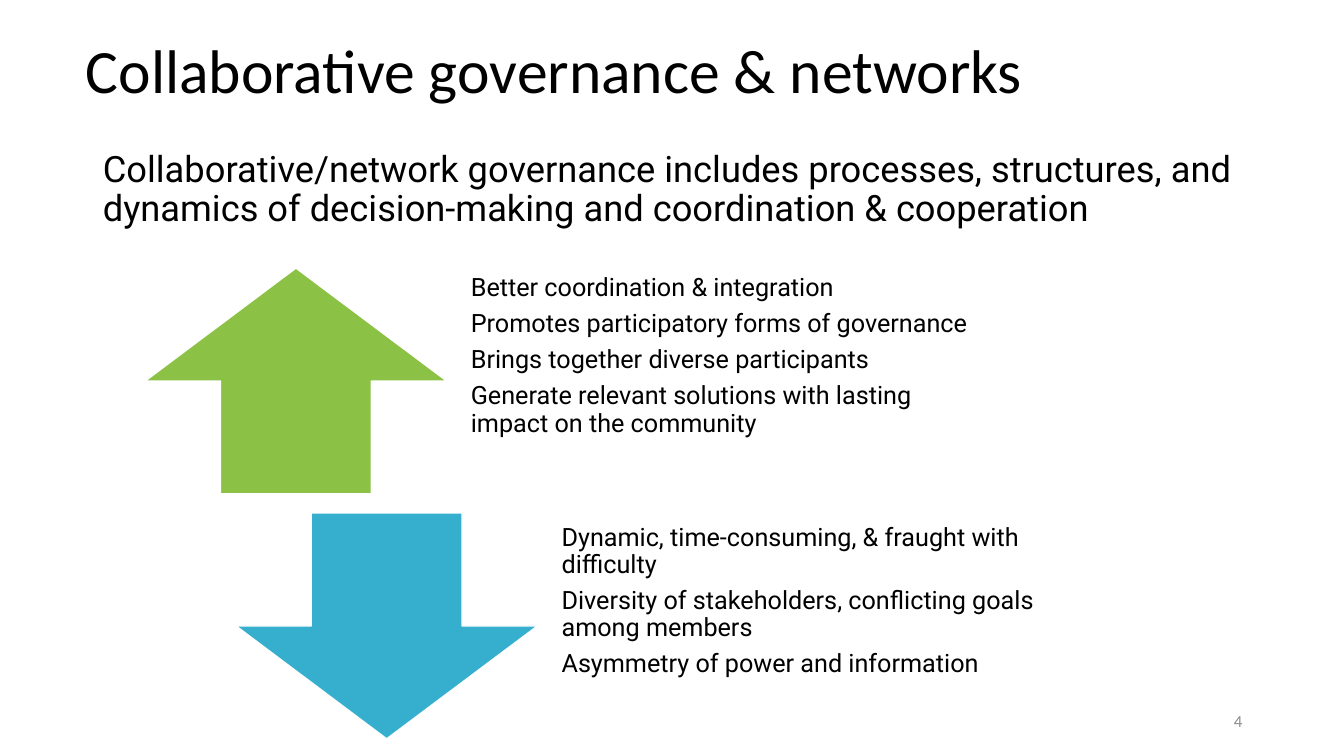
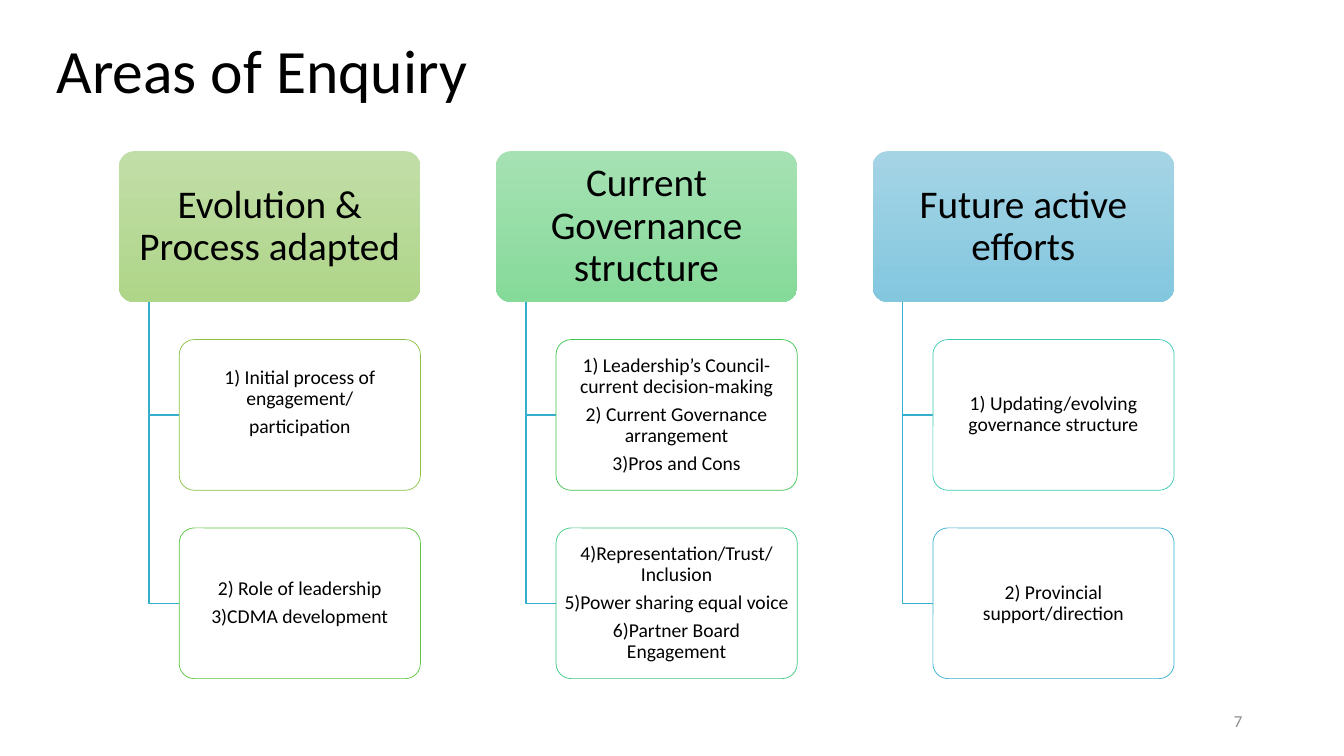
from pptx import Presentation
from pptx.dml.color import RGBColor
from pptx.enum.shapes import MSO_SHAPE as SHAPE
from pptx.enum.text import MSO_ANCHOR as ANCHOR, MSO_AUTO_SIZE as AUTO, PP_ALIGN as ALIGN
from pptx.oxml import parse_xml
from pptx.oxml.ns import nsdecls
from pptx.util import Inches, Pt

BLACK = RGBColor(0x00, 0x00, 0x00)
WHITE = RGBColor(0xFF, 0xFF, 0xFF)
GREY = RGBColor(0x8C, 0x8C, 0x8C)
LIME = RGBColor(0x8B, 0xC1, 0x45)
BLUE = RGBColor(0x36, 0xAF, 0xCE)
LEAF = RGBColor(0x5D, 0xC4, 0x42)
GREEN = RGBColor(0x3F, 0xC6, 0x52)
MINT = RGBColor(0x3C, 0xC9, 0x82)
TEAL = RGBColor(0x39, 0xCB, 0xB5)
LIME_FADE = [RGBColor(0xC2, 0xDE, 0xA8), RGBColor(0xAE, 0xD5, 0x88)]
GREEN_FADE = [RGBColor(0xA6, 0xE1, 0xB4), RGBColor(0x86, 0xDA, 0x99)]
BLUE_FADE = [RGBColor(0xA5, 0xD4, 0xE5), RGBColor(0x83, 0xC7, 0xDF)]

HEADING_FONT = "Calibri"
BODY_FONT = "Roboto"
LIST_GAP = 0.35


def write(sp, lines, size, font=HEADING_FONT, color=BLACK, align=ALIGN.LEFT,
          anchor=ANCHOR.MIDDLE, insets=(0.1, 0.05, 0.1, 0.05), spacing=0.9,
          before=0, after=0):
    tf = sp.text_frame
    tf.word_wrap = True
    tf.auto_size = AUTO.NONE
    tf.vertical_anchor = anchor
    (tf.margin_left, tf.margin_top,
     tf.margin_right, tf.margin_bottom) = [Inches(v) for v in insets]
    for i, line in enumerate(lines):
        p = tf.add_paragraph() if i else tf.paragraphs[0]
        p.alignment = align
        p.line_spacing = spacing
        p.space_before = Pt(before)
        p.space_after = Pt(after)
        r = p.add_run()
        r.text = line
        r.font.size = Pt(size)
        r.font.name = font
        r.font.color.rgb = color


class Deck:
    def __init__(self):
        self.prs = Presentation()
        self.prs.slide_width = Inches(13.33)
        self.prs.slide_height = Inches(7.5)
        self.s = None

    def slide(self, title, number, left, layout):
        self.s = self.prs.slides.add_slide(self.prs.slide_layouts[layout])
        sp = self.s.shapes.title
        self.place(sp, left, 0, 11.5, 1.45)
        write(sp, [title], 44)
        self.text([number], 9.42, 6.95, 3, 0.4, size=12, color=GREY,
                  align=ALIGN.RIGHT, spacing=1)

    def place(self, sp, x, y, w, h):
        sp.left, sp.top, sp.width, sp.height = [Inches(v) for v in (x, y, w, h)]

    def body(self, lines, x, y, w, h):
        sp = self.s.placeholders[1]
        self.place(sp, x, y, w, h)
        write(sp, lines, 25.9, font=BODY_FONT, anchor=ANCHOR.TOP, before=10)
        for p in sp.text_frame.paragraphs:
            pPr = p._p.get_or_add_pPr()
            pPr.set("marL", "0")
            pPr.set("indent", "0")
            pPr.append(parse_xml(f"<a:buNone {nsdecls('a')}/>"))

    def text(self, lines, x, y, w, h, **style):
        sp = self.s.shapes.add_textbox(Inches(x), Inches(y), Inches(w), Inches(h))
        write(sp, lines, **style)

    def shape(self, kind, x, y, w, h, fill, line=None, width=1):
        sp = self.s.shapes.add_shape(kind, Inches(x), Inches(y), Inches(w), Inches(h))
        sp.shadow.inherit = False
        if isinstance(fill, list):
            sp.fill.gradient()
            sp.fill.gradient_angle = 270
            for stop, color in zip(sp.fill.gradient_stops, fill):
                stop.color.rgb = color
        else:
            sp.fill.solid()
            sp.fill.fore_color.rgb = fill
        if line is None:
            sp.line.fill.background()
        else:
            sp.line.color.rgb = line
            sp.line.width = Pt(width)
        return sp

    def card(self, lines, x, y, w, h, fill, size, insets, line=None):
        sp = self.shape(SHAPE.ROUNDED_RECTANGLE, x, y, w, h, fill, line, 0.5)
        sp.adjustments[0] = 0.1
        write(sp, lines, size, align=ALIGN.CENTER, insets=insets,
              after=size * LIST_GAP)

    def elbow(self, x, top, bottom, right):
        fb = self.s.shapes.build_freeform(Inches(x), Inches(top))
        fb.add_line_segments([(Inches(x), Inches(bottom)),
                              (Inches(right), Inches(bottom))], close=False)
        sp = fb.convert_to_shape()
        sp.shadow.inherit = False
        sp.fill.background()
        sp.line.color.rgb = BLUE
        sp.line.width = Pt(1)


def governance(deck):
    deck.slide("Collaborative governance & networks", "4", 0.75, layout=1)
    deck.body(["Collaborative/network governance includes processes, structures, and "
               "dynamics of decision-making and coordination & cooperation"],
              0.92, 1.45, 11.5, 0.93)
    arrows = [
        (SHAPE.UP_ARROW, 1.44, 2.66, LIME,
         ["Better coordination & integration",
          "Promotes participatory forms of governance",
          "Brings together diverse participants",
          "Generate relevant solutions with lasting impact on the community"]),
        (SHAPE.DOWN_ARROW, 2.34, 5.09, BLUE,
         ["Dynamic, time-consuming, & fraught with difficulty",
          "Diversity of stakeholders, conflicting goals among members",
          "Asymmetry of power and information"]),
    ]
    for kind, x, y, color, lines in arrows:
        deck.shape(kind, x, y, 2.99, 2.24, color, WHITE)
        deck.text(lines, x + 3.09, y, 5.3, 2.24, size=18, font=BODY_FONT,
                  insets=(0.14, 0, 0.14, 0.49), after=18 * LIST_GAP)


def enquiry(deck):
    deck.slide("Areas of Enquiry", "7", 0.46, layout=5)
    columns = [
        ("Evolution & Process adapted", LIME_FADE, [
            (LIME, 0.27, ["1) Initial process of engagement/", "participation"]),
            (LEAF, 0.02, ["2) Role of leadership", "3)CDMA development"])]),
        ("Current Governance structure", GREEN_FADE, [
            (GREEN, 0.02, ["1) Leadership’s Council-current decision-making",
                           "2) Current Governance arrangement",
                           "3)Pros and Cons"]),
            (MINT, 0.02, ["4)Representation/Trust/ Inclusion",
                          "5)Power sharing equal voice",
                          "6)Partner Board Engagement"])]),
        ("Future active efforts", BLUE_FADE, [
            (TEAL, 0.02, ["1) Updating/evolving governance structure"]),
            (BLUE, 0.02, ["2) Provincial support/direction"])]),
    ]
    left, top, w = 1.18, 1.5, 2.99
    h = w / 2
    indent = w / 10
    for col, (heading, fade, items) in enumerate(columns):
        x = left + col * w * 1.25
        deck.card([heading], x, top, w, h, fade, 28, (0.06, 0.04, 0.06, 0.04))
        for row, (color, bottom, lines) in enumerate(items, 1):
            y = top + row * h * 1.25
            deck.elbow(x + indent, top + h, y + h / 2, x + 2 * indent)
            deck.card(lines, x + 2 * indent, y, w - 2 * indent, h, WHITE, 14,
                      (0.03, 0.02, 0.03, bottom), color)


def main():
    deck = Deck()
    governance(deck)
    enquiry(deck)
    deck.prs.save("out.pptx")


if __name__ == "__main__":
    main()
